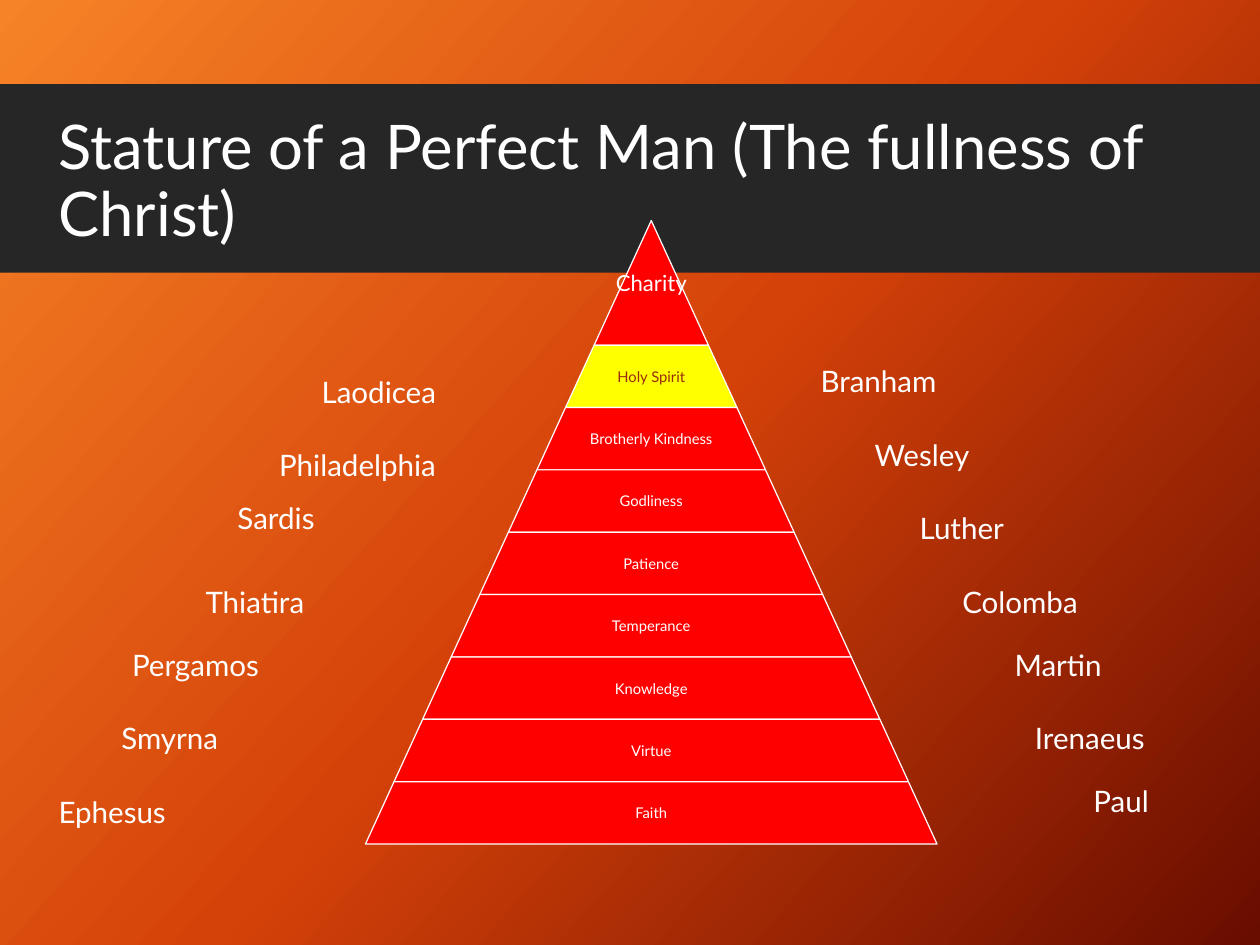
import copy

import pptx
import pptx.dml.color
import pptx.enum.shapes
import pptx.enum.text
import pptx.oxml.ns
import pptx.util

RGB = pptx.dml.color.RGBColor
ALIGN = pptx.enum.text.PP_ALIGN
ANCHOR = pptx.enum.text.MSO_ANCHOR
Inches = pptx.util.Inches

WHITE = RGB(0xFF, 0xFF, 0xFF)
RED = RGB(0xFF, 0x00, 0x00)
YELLOW = RGB(0xFF, 0xFF, 0x00)
RUST = RGB(0x99, 0x2B, 0x0F)
DARK = RGB(0x26, 0x26, 0x26)
GLOW = [(0, RGB(0xF6, 0x83, 0x27)), (0.5, RGB(0xD5, 0x42, 0x09)),
        (1, RGB(0x69, 0x0D, 0x00))]

TITLE = "Stature of a Perfect Man (The fullness of Christ)"
# label, height in rows, text size, fill, text colour
TIERS = [("Charity", 2, 18, RED, WHITE), ("Holy Spirit", 1, 12, YELLOW, RUST)]
TIERS += [(name, 1, 12, RED, WHITE) for name in (
    "Brotherly Kindness", "Godliness", "Patience", "Temperance",
    "Knowledge", "Virtue", "Faith")]
# name, left and top in inches
AGES = [("Laodicea", 3.56, 4.15), ("Philadelphia", 3.08, 4.98),
        ("Sardis", 2.61, 5.57), ("Thiatira", 2.25, 6.52),
        ("Pergamos", 1.42, 7.23), ("Smyrna", 1.3, 8.06),
        ("Ephesus", 0.59, 8.89)]
GUIDES = [("Branham", 9.19, 4.03), ("Wesley", 9.8, 4.86),
          ("Luther", 10.31, 5.69), ("Colomba", 10.79, 6.52),
          ("Martin", 11.38, 7.23), ("Irenaeus", 11.61, 8.06),
          ("Paul", 12.27, 8.77)]

WIDE, HIGH = 14.22, 10.67
APEX, PEAK = 7.35, 2.49  # top point of the pyramid
ROW = 0.704
SLOPE = 3.225 / (10 * ROW)  # half width gained per inch of height
INSET = Inches(0.07)


def write(shape, text, size, color=WHITE, align=ALIGN.LEFT, anchor=ANCHOR.TOP):
    frame = shape.text_frame
    frame.word_wrap = True
    frame.auto_size = pptx.enum.text.MSO_AUTO_SIZE.NONE
    frame.vertical_anchor = anchor
    frame.margin_left = frame.margin_right = INSET
    frame.margin_top = frame.margin_bottom = INSET
    para = frame.paragraphs[0]
    para.alignment = align
    run = para.add_run()
    run.text = text
    run.font.name = "Lato"
    run.font.size = pptx.util.Pt(size)
    run.font.color.rgb = color
    return para


def paint(slide):
    """Fill the background with the three-stop gradient."""
    fill = slide.background.fill
    fill.gradient()
    fill.gradient_angle = 360 - 42
    stops = slide.element.find(".//" + pptx.oxml.ns.qn("a:gsLst"))
    stops.append(copy.deepcopy(stops[0]))
    for stop, (share, color) in zip(fill.gradient_stops, GLOW):
        stop.position = share
        stop.color.rgb = color


def head(slide):
    title = slide.shapes.title
    title.left, title.top = Inches(0.59), Inches(1)
    title.width, title.height = Inches(12.8), Inches(2.13)
    para = write(title, TITLE, 50, anchor=ANCHOR.MIDDLE)
    para.line_spacing = 0.9
    band = slide.shapes.add_shape(
        pptx.enum.shapes.MSO_SHAPE.RECTANGLE,
        0, Inches(0.95), Inches(WIDE), Inches(2.13))
    band.shadow.inherit = False
    band.fill.solid()
    band.fill.fore_color.rgb = DARK
    band.line.fill.background()
    title.element.addprevious(band.element)


def stack(slide):
    """Cut the pyramid into tiers, from the apex down."""
    top = PEAK
    for label, rows, size, fill, color in TIERS:
        low = top + rows * ROW
        near, far = (top - PEAK) * SLOPE, (low - PEAK) * SLOPE
        spots = [(APEX + near, top), (APEX + far, low), (APEX - far, low)]
        if near:
            spots.append((APEX - near, top))
        spots = [(Inches(x), Inches(y)) for x, y in spots]
        pen = slide.shapes.build_freeform(*spots[0])
        pen.add_line_segments(spots[1:], close=True)
        tier = pen.convert_to_shape()
        tier.shadow.inherit = False
        tier.fill.solid()
        tier.fill.fore_color.rgb = fill
        tier.line.color.rgb = WHITE
        tier.line.width = pptx.util.Pt(1)
        write(tier, label, size, color, ALIGN.CENTER, ANCHOR.MIDDLE)
        top = low


def main():
    deck = pptx.Presentation()
    deck.slide_width, deck.slide_height = Inches(WIDE), Inches(HIGH)
    slide = deck.slides.add_slide(deck.slide_layouts[5])
    paint(slide)
    head(slide)
    stack(slide)
    for name, left, top in GUIDES + AGES:
        box = slide.shapes.add_textbox(
            Inches(left), Inches(top), Inches(3.91), Inches(0.53))
        write(box, name, 24)
    deck.save("out.pptx")


if __name__ == "__main__":
    main()
